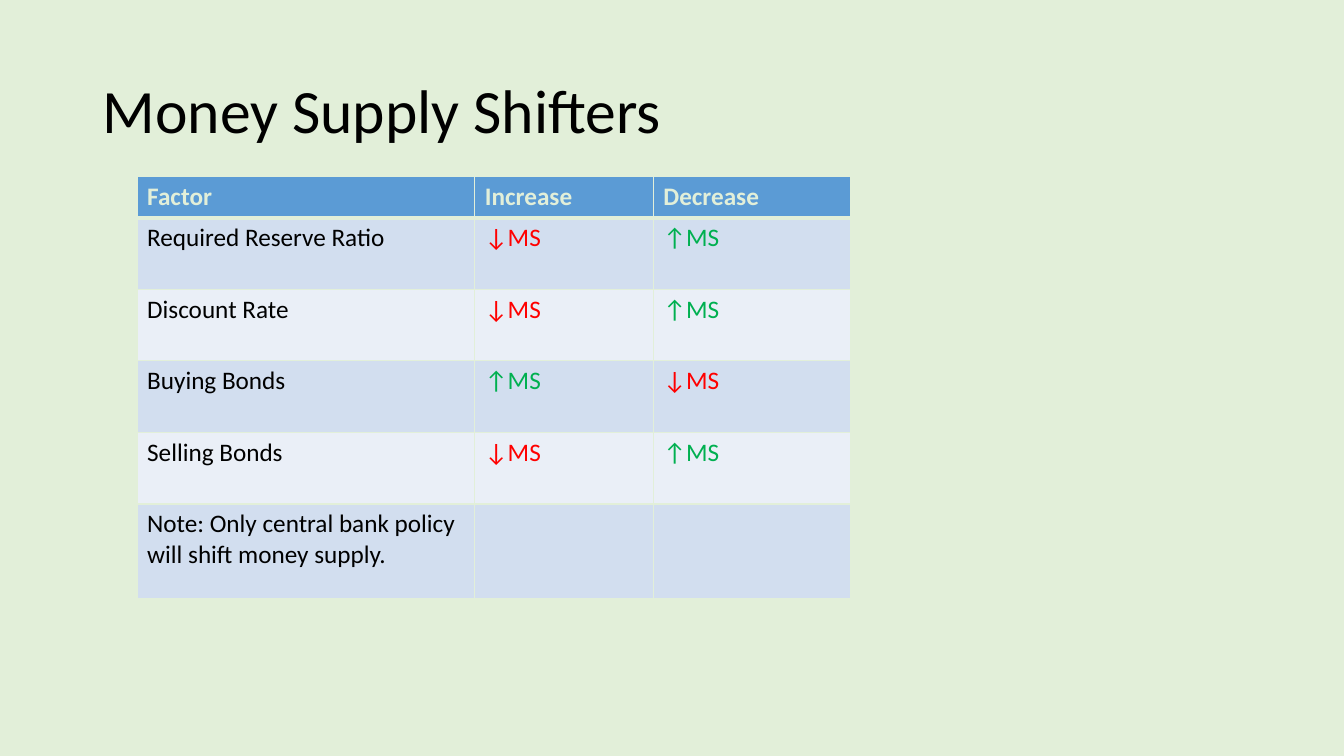
"""Build the Money Supply Shifters slide."""
from lxml.etree import SubElement
from pptx import Presentation
from pptx.dml.color import RGBColor
from pptx.enum.text import MSO_ANCHOR
from pptx.oxml.ns import qn
from pptx.util import Inches, Pt

TITLE = "Money Supply Shifters"
ROWS = [
    ("Factor", "Increase", "Decrease"),
    ("Required Reserve Ratio", "↓MS", "↑MS"),
    ("Discount Rate", "↓MS", "↑MS"),
    ("Buying Bonds", "↑MS", "↓MS"),
    ("Selling Bonds", "↓MS", "↑MS"),
    ("Note: Only central bank policy will shift money supply.", "", ""),
]
COLUMN_WIDTHS = [3.35, 1.77, 1.96]
ROW_HEIGHTS = [0.41, 0.71, 0.71, 0.71, 0.71, 0.94]

FONT = "Calibri"
BACKGROUND = RGBColor(0xE2, 0xEF, 0xD9)
HEADER_FILL = RGBColor(0x5B, 0x9B, 0xD5)
BAND_FILLS = [RGBColor(0xEA, 0xEF, 0xF7), RGBColor(0xD2, 0xDE, 0xEF)]
BLACK = RGBColor(0, 0, 0)
ARROW_COLORS = {"↓": RGBColor(0xFF, 0, 0), "↑": RGBColor(0, 0xB0, 0x50)}


def style_text(paragraph, size, color, bold=False):
    for run in paragraph.runs:
        run.font.name = FONT
        run.font.size = Pt(size)
        run.font.bold = bold
        run.font.color.rgb = color


def add_borders(cell, top, bottom):
    properties = cell._tc.get_or_add_tcPr()
    for side, width in (("L", 1), ("R", 1), ("T", top), ("B", bottom)):
        line = SubElement(properties, qn(f"a:ln{side}"), w=str(Pt(width)))
        fill = SubElement(line, qn("a:solidFill"))
        SubElement(fill, qn("a:srgbClr"), val=str(BACKGROUND))


def add_title(slide):
    title = slide.shapes.add_textbox(Inches(0.92), Inches(0.4), Inches(11.5), Inches(1.45))
    frame = title.text_frame
    frame.word_wrap = True
    frame.vertical_anchor = MSO_ANCHOR.MIDDLE
    frame.text = TITLE
    frame.paragraphs[0].line_spacing = 0.9
    style_text(frame.paragraphs[0], 44, BLACK)


def add_factor_table(slide):
    table = slide.shapes.add_table(
        len(ROWS), len(COLUMN_WIDTHS), Inches(1.36), Inches(1.75),
        Inches(sum(COLUMN_WIDTHS)), Inches(sum(ROW_HEIGHTS))).table
    for column, width in zip(table.columns, COLUMN_WIDTHS):
        column.width = Inches(width)
    for index, (row, height, texts) in enumerate(zip(table.rows, ROW_HEIGHTS, ROWS)):
        row.height = Inches(height)
        is_header = index == 0
        for cell, text in zip(row.cells, texts):
            add_borders(cell, 3 if index == 1 else 1, 3 if is_header else 1)
            cell.fill.solid()
            cell.fill.fore_color.rgb = HEADER_FILL if is_header else BAND_FILLS[index % 2]
            cell.text_frame.text = text
            color = BACKGROUND if is_header else ARROW_COLORS.get(text[:1], BLACK)
            style_text(cell.text_frame.paragraphs[0], 18, color, is_header)


def main():
    presentation = Presentation()
    presentation.slide_width = Inches(13.33)
    presentation.slide_height = Inches(7.5)
    slide = presentation.slides.add_slide(presentation.slide_layouts[6])
    slide.background.fill.solid()
    slide.background.fill.fore_color.rgb = BACKGROUND
    add_title(slide)
    add_factor_table(slide)
    presentation.save("out.pptx")


if __name__ == "__main__":
    main()
